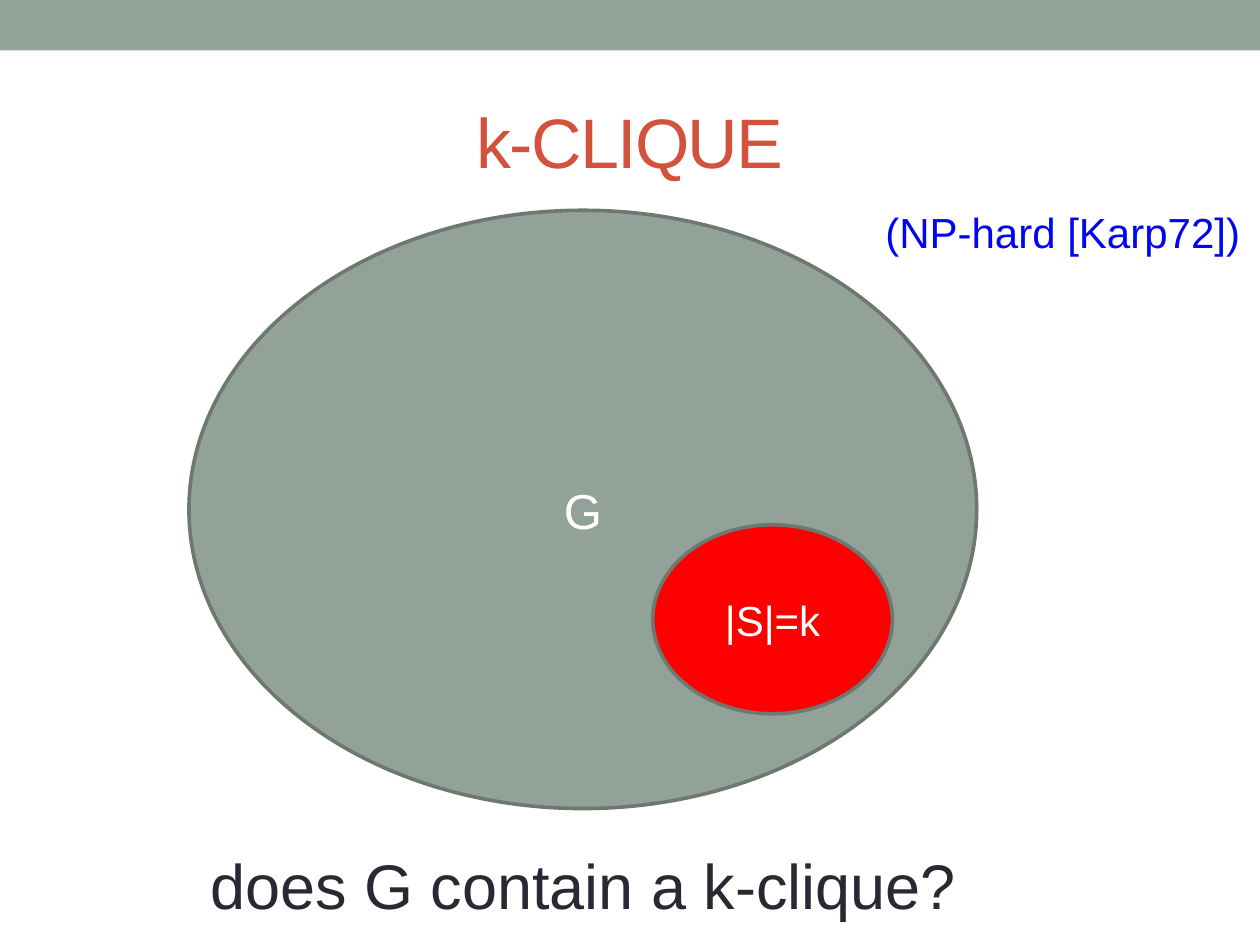
from dataclasses import dataclass

import pptx
import pptx.dml.color
import pptx.enum.shapes
import pptx.enum.text
import pptx.shapes.autoshape
import pptx.slide
import pptx.util

RGBColor = pptx.dml.color.RGBColor
Cm = pptx.util.Cm
Pt = pptx.util.Pt
Anchor = pptx.enum.text.MSO_ANCHOR
ShapeType = pptx.enum.shapes.MSO_SHAPE

SAGE = RGBColor(0x93, 0xA2, 0x99)
OUTLINE = RGBColor(0x6D, 0x78, 0x71)
RED = RGBColor(0xFF, 0x00, 0x00)
RUST = RGBColor(0xD2, 0x53, 0x3C)
INK = RGBColor(0x29, 0x29, 0x34)
BLUE = RGBColor(0x00, 0x06, 0xF2)
WHITE = RGBColor(0xFF, 0xFF, 0xFF)


@dataclass(frozen=True)
class Box:
    left: float
    top: float
    width: float
    height: float

    def lengths(self) -> tuple[Cm, Cm, Cm, Cm]:
        return Cm(self.left), Cm(self.top), Cm(self.width), Cm(self.height)


@dataclass(frozen=True)
class Label:
    text: str
    size: float
    color: RGBColor
    anchor: Anchor = Anchor.TOP
    wrap: bool = False
    spacing: float = 0


@dataclass(frozen=True)
class VertexSet:
    box: Box
    fill: RGBColor
    label: Label


TITLE_BOX = Box(1.27, 1.47, 22.86, 2.74)
TITLE = Label("k-CLIQUE", 40, RUST, Anchor.MIDDLE, True, -1)

VERTEX_SETS = [
    VertexSet(Box(3.81, 4.24, 15.88, 12.06), SAGE,
              Label("G", 28, WHITE, Anchor.MIDDLE, True)),
    VertexSet(Box(13.16, 10.58, 4.83, 3.81), RED,
              Label("|S|=k", 24, WHITE, Anchor.MIDDLE, True)),
]

CAPTIONS = [
    (Box(3.91, 16.94, 15.7, 1.8), Label("does G contain a k-clique?", 36, INK)),
    (Box(17.55, 4.04, 7.75, 1.27), Label("(NP-hard [Karp72])", 24, BLUE)),
]


def write_label(shape: pptx.shapes.autoshape.Shape, label: Label) -> None:
    frame = shape.text_frame
    frame.word_wrap = label.wrap
    frame.vertical_anchor = label.anchor
    paragraph = frame.paragraphs[0]
    paragraph.alignment = pptx.enum.text.PP_ALIGN.CENTER
    paragraph.font.name = "Arial"
    paragraph.font.size = Pt(label.size)
    paragraph.font.color.rgb = label.color
    run = paragraph.add_run()
    run.text = label.text
    if label.spacing:
        run.font._element.set("spc", str(round(label.spacing * 100)))


def add_filled_shape(slide: pptx.slide.Slide, kind: ShapeType, box: Box,
                     fill: RGBColor) -> pptx.shapes.autoshape.Shape:
    shape = slide.shapes.add_shape(kind, *box.lengths())
    shape.shadow.inherit = False
    shape.fill.solid()
    shape.fill.fore_color.rgb = fill
    shape.line.fill.background()
    return shape


def add_vertex_set(slide: pptx.slide.Slide, vertex_set: VertexSet) -> None:
    shape = add_filled_shape(slide, ShapeType.OVAL, vertex_set.box, vertex_set.fill)
    shape.line.color.rgb = OUTLINE
    shape.line.width = Pt(2.08)
    write_label(shape, vertex_set.label)


def add_text(slide: pptx.slide.Slide, box: Box, label: Label) -> None:
    write_label(slide.shapes.add_textbox(*box.lengths()), label)


def main() -> None:
    presentation = pptx.Presentation()
    presentation.slide_width = Cm(25.4)
    presentation.slide_height = Cm(19.05)
    slide = presentation.slides.add_slide(presentation.slide_layouts[6])

    add_filled_shape(slide, ShapeType.RECTANGLE, Box(0, 0, 25.4, 1.02), SAGE)
    add_text(slide, TITLE_BOX, TITLE)
    for vertex_set in VERTEX_SETS:
        add_vertex_set(slide, vertex_set)
    for box, label in CAPTIONS:
        add_text(slide, box, label)

    presentation.save("out.pptx")


if __name__ == "__main__":
    main()
